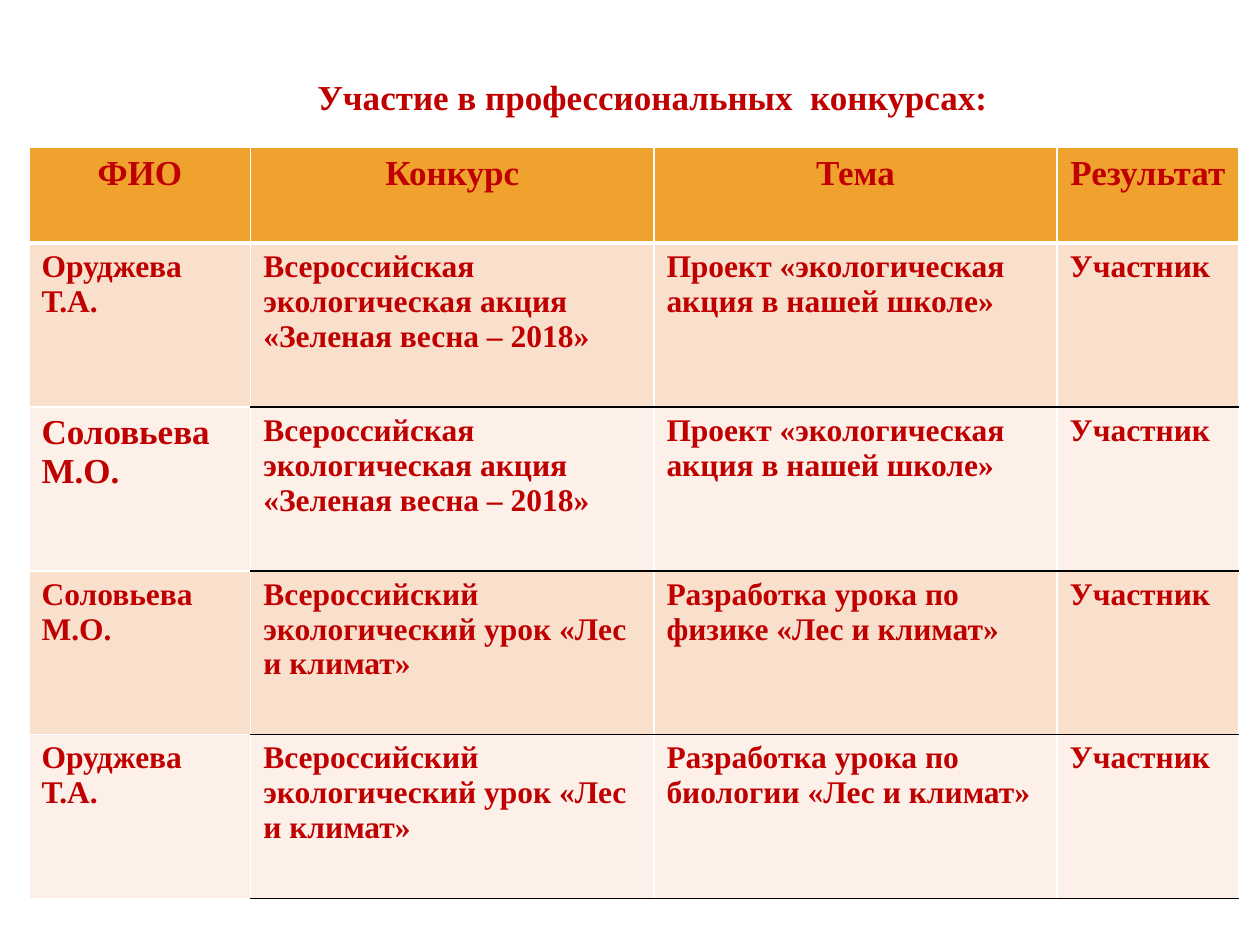
from lxml import etree
from pptx import Presentation
from pptx.dml.color import RGBColor
from pptx.enum.text import MSO_AUTO_SIZE, PP_ALIGN
from pptx.oxml.ns import qn
from pptx.util import Inches, Pt

CENTER, LEFT = PP_ALIGN.CENTER, PP_ALIGN.LEFT
FIT_SHAPE = MSO_AUTO_SIZE.SHAPE_TO_FIT_TEXT
RED = RGBColor(0xC0, 0x00, 0x00)
ORANGE = RGBColor(0xF0, 0xA2, 0x2E)
PEACH = RGBColor(0xF9, 0xE0, 0xCD)
CREAM = RGBColor(0xFC, 0xF0, 0xE8)
WHITE = RGBColor(0xFF, 0xFF, 0xFF)
BLACK = RGBColor(0x00, 0x00, 0x00)
FONT = "Times New Roman"

HEADERS = ["ФИО", "Конкурс", "Тема", "Результат"]
SPRING = "Всероссийская экологическая акция  «Зеленая весна – 2018»"
LESSON = "Всероссийский экологический урок «Лес и климат»"
PROJECT = "Проект «экологическая акция в нашей школе»"
ENTRIES = [
    ["Оруджева Т.А.", SPRING, PROJECT, "Участник"],
    ["Соловьева М.О.", SPRING, PROJECT, "Участник"],
    ["Соловьева М.О.", LESSON, "Разработка урока по физике «Лес и климат»", "Участник"],
    ["Оруджева Т.А.", LESSON, "Разработка урока по биологии «Лес и климат»", "Участник"],
]
COLUMN_WIDTHS = [1.76, 3.2, 3.2, 1.44]
HEADER_HEIGHT = 0.76
LARGE_NAME = (2, 0)


def write_text(text_frame, text, size, alignment):
    """Write one bold red paragraph."""
    paragraph = text_frame.paragraphs[0]
    paragraph.text = text
    paragraph.alignment = alignment
    paragraph.font.name = FONT
    paragraph.font.size = Pt(size)
    paragraph.font.bold = True
    paragraph.font.color.rgb = RED


def add_border(cell, side, color, width):
    """Draw one side of a cell; sides come in the order L, R, T, B."""
    properties = cell._tc.get_or_add_tcPr()
    line = etree.SubElement(properties, qn(f"a:ln{side}"), w=str(Pt(width)))
    fill = etree.SubElement(line, qn("a:solidFill"))
    etree.SubElement(fill, qn("a:srgbClr"), val=str(color))


def style_cell(cell, row, column):
    """Set the borders and fill that belong to a cell's place in the table."""
    top = BLACK if row > 1 and column > 0 else WHITE
    bottom = BLACK if row > 0 and column > 0 else WHITE
    add_border(cell, "L", WHITE, 1)
    add_border(cell, "R", WHITE, 1)
    add_border(cell, "T", top, 3 if row == 1 else 1)
    add_border(cell, "B", bottom, 3 if row == 0 else 1)
    cell.fill.solid()
    cell.fill.fore_color.rgb = ORANGE if row == 0 else PEACH if row % 2 else CREAM


def add_title(slide, left, top, width, height):
    """Add the heading above the table."""
    text_frame = slide.shapes.add_textbox(left, top, width, height).text_frame
    text_frame.word_wrap = False
    text_frame.auto_size = FIT_SHAPE
    write_text(text_frame, "Участие в профессиональных  конкурсах:", 20, LEFT)


def add_contest_table(slide, left, top, width, height):
    """Add the table of contests with equal rows under its header."""
    rows = [HEADERS] + ENTRIES
    table = slide.shapes.add_table(len(rows), len(HEADERS), left, top, width, height).table
    for column, column_width in zip(table.columns, COLUMN_WIDTHS):
        column.width = Inches(column_width)
    header_height = Inches(HEADER_HEIGHT)
    for index, row in enumerate(table.rows):
        row.height = (height - header_height) // len(ENTRIES) if index else header_height
    for row, texts in enumerate(rows):
        for column, text in enumerate(texts):
            cell = table.cell(row, column)
            size = 20 if row == 0 or (row, column) == LARGE_NAME else 18
            write_text(cell.text_frame, text, size, LEFT if row else CENTER)
            style_cell(cell, row, column)


def main():
    """Build and save the slide."""
    presentation = Presentation()
    presentation.slide_width = Inches(10)
    presentation.slide_height = Inches(7.5)
    slide = presentation.slides.add_slide(presentation.slide_layouts[6])
    add_title(slide, Inches(2.42), Inches(0.55), Inches(5.56), Inches(0.44))
    add_contest_table(slide, Inches(0.23), Inches(1.17), Inches(9.6), Inches(5.96))
    presentation.save("out.pptx")


if __name__ == "__main__":
    main()
